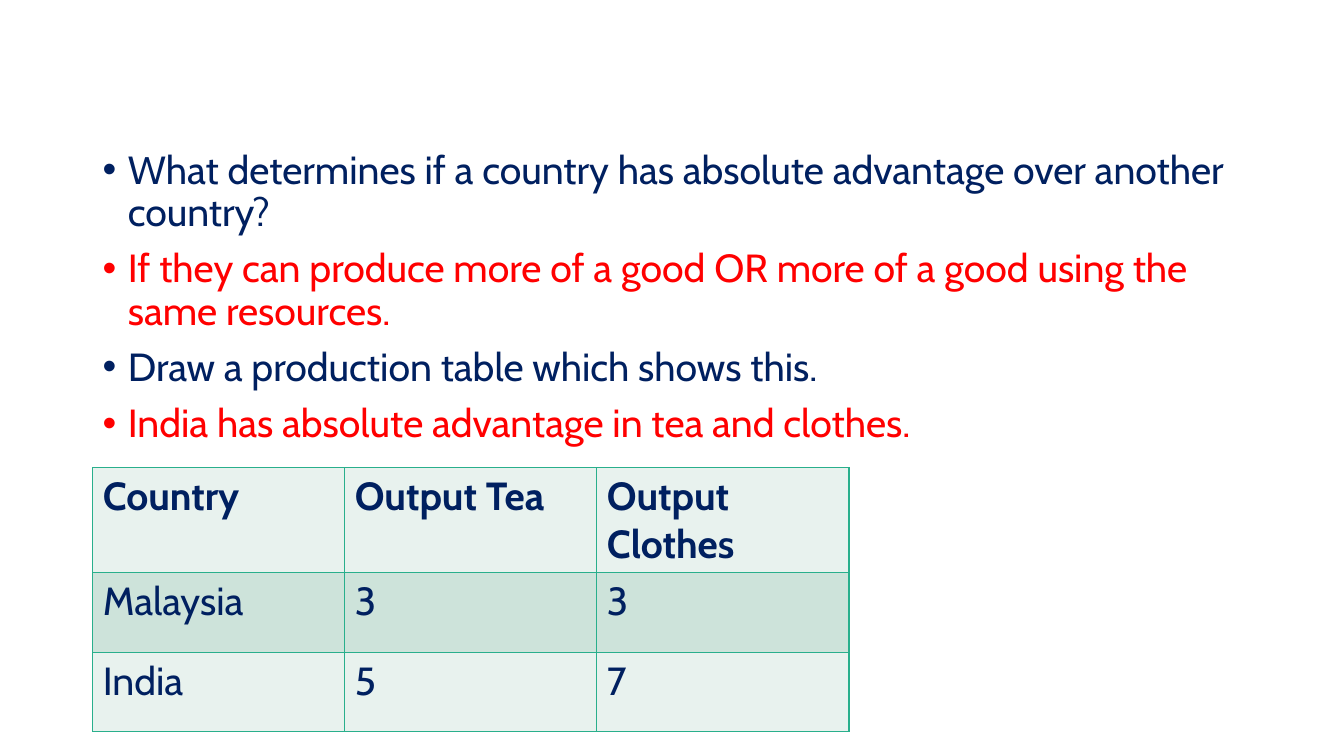
"""Build a slide of questions and answers on absolute advantage with a production table."""
from dataclasses import dataclass

import lxml.etree
import pptx
import pptx.dml.color
import pptx.oxml.ns
import pptx.util

Inches = pptx.util.Inches
Pt = pptx.util.Pt
qn = pptx.oxml.ns.qn

COLOURS = {
    "navy": "002060",
    "red": "FF0000",
    "border": "29AF8C",
    "pale": "E8F2EE",
    "band": "CDE3DA",
}


@dataclass
class Bullet:
    text: str
    colour: str


@dataclass
class Row:
    cells: list[str]
    fill: str
    height: float
    bold: bool = False


BULLETS = [
    Bullet("What determines if a country has absolute advantage over another country?", "navy"),
    Bullet("If they can produce more of a good OR more of a good using the same resources.", "red"),
    Bullet("Draw a production table which shows this.", "navy"),
    Bullet("India has absolute advantage in tea and clothes.", "red"),
]
ROWS = [
    Row(["Country", "Output Tea", "Output\nClothes"], "pale", 1.04, bold=True),
    Row(["Malaysia", "3", "3"], "band", 0.79),
    Row(["India", "5", "7"], "pale", 0.79),
]
LEFT = 0.92
COLUMN_WIDTH = 2.5


def rgb(name: str) -> pptx.dml.color.RGBColor:
    return pptx.dml.color.RGBColor.from_string(COLOURS[name])


def add_span(para, text: str, colour: str, bold: bool = False) -> None:
    span = para.add_run()
    span.text = text
    span.font.name = "Cabin"
    span.font.size = Pt(28)
    span.font.bold = bold
    span.font.color.rgb = rgb(colour)


def add_bullets(page, bullets: list[Bullet]) -> None:
    box = page.shapes.add_textbox(Inches(LEFT), Inches(1.44), Inches(11.5), Inches(5.31))
    frame = box.text_frame
    frame.word_wrap = True
    for index, bullet in enumerate(bullets):
        para = frame.add_paragraph() if index else frame.paragraphs[0]
        properties = para._p.get_or_add_pPr()
        properties.set("marL", str(Inches(0.25)))
        properties.set("indent", str(-Inches(0.25)))
        lxml.etree.SubElement(properties, qn("a:buFont"), typeface="Arial")
        lxml.etree.SubElement(properties, qn("a:buChar"), char="•")
        para.line_spacing = 0.9
        para.space_before = Pt(10 if index else 0)
        add_span(para, bullet.text, bullet.colour)


def add_borders(cell) -> None:
    properties = cell._tc.get_or_add_tcPr()
    for position, side in enumerate(("lnL", "lnR", "lnT", "lnB")):
        line = lxml.etree.Element(qn(f"a:{side}"), w=str(Pt(1)))
        fill = lxml.etree.SubElement(line, qn("a:solidFill"))
        lxml.etree.SubElement(fill, qn("a:srgbClr"), val=COLOURS["border"])
        properties.insert(position, line)


def add_production_table(page, rows: list[Row]) -> None:
    columns = len(rows[0].cells)
    table = page.shapes.add_table(
        len(rows), columns, Inches(LEFT), Inches(4.64),
        Inches(COLUMN_WIDTH * columns), Inches(sum(row.height for row in rows)),
    ).table
    for column in table.columns:
        column.width = Inches(COLUMN_WIDTH)
    for row_index, row in enumerate(rows):
        table.rows[row_index].height = Inches(row.height)
        for column_index, text in enumerate(row.cells):
            cell = table.cell(row_index, column_index)
            cell.fill.solid()
            cell.fill.fore_color.rgb = rgb(row.fill)
            add_borders(cell)
            frame = cell.text_frame
            for line_index, line in enumerate(text.split("\n")):
                para = frame.add_paragraph() if line_index else frame.paragraphs[0]
                add_span(para, line, "navy", row.bold)


def main() -> None:
    deck = pptx.Presentation()
    deck.slide_width = Inches(13.33)
    deck.slide_height = Inches(7.5)
    page = deck.slides.add_slide(deck.slide_layouts[6])
    add_bullets(page, BULLETS)
    add_production_table(page, ROWS)
    deck.save("out.pptx")


if __name__ == "__main__":
    main()
